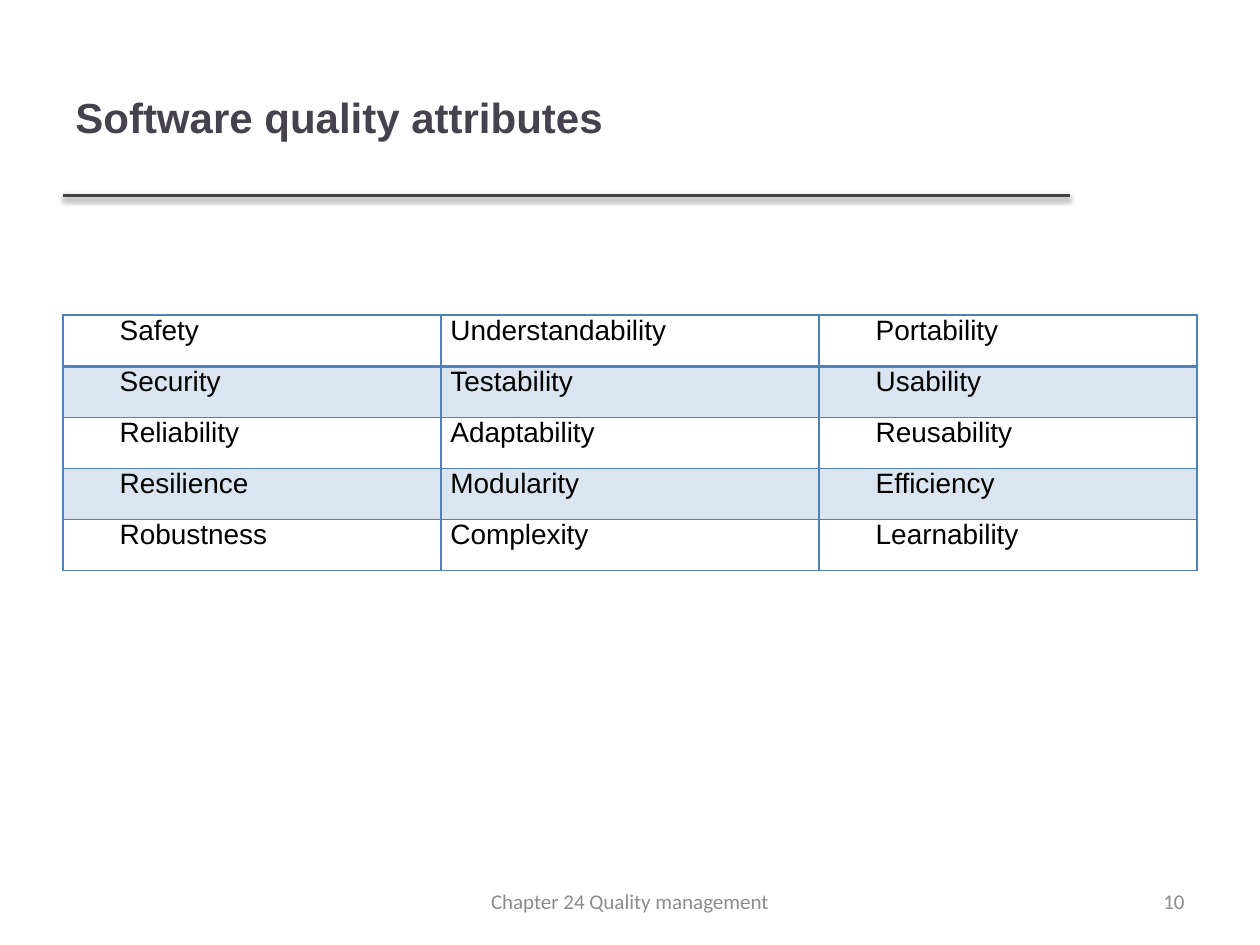
from lxml import etree
from pptx import Presentation
from pptx.dml.color import RGBColor
from pptx.enum.shapes import MSO_CONNECTOR
from pptx.enum.text import MSO_ANCHOR, PP_ALIGN
from pptx.oxml.ns import qn
from pptx.util import Pt

COLORS = {
    "title": "46424D",
    "rule": "404040",
    "shadow": "000000",
    "text": "000000",
    "accent": "4F81BD",
    "footer": "8C8C8C",
}

ATTRIBUTES = [
    ("Safety", "Understandability", "Portability"),
    ("Security", "Testability", "Usability"),
    ("Reliability", "Adaptability", "Reusability"),
    ("Resilience", "Modularity", "Efficiency"),
    ("Robustness", "Complexity", "Learnability"),
]


def add_color(parent, color, alpha=None):
    clr = etree.SubElement(parent, qn("a:srgbClr"), val=COLORS[color])
    if alpha is not None:
        etree.SubElement(clr, qn("a:alpha"), val=str(alpha * 1000))
    return clr


class SlideBuilder:
    """Holds the shared style and the slide being filled."""

    heading_font = "Arial"
    footer_font = "Calibri"

    def __init__(self, slide):
        self.slide = slide

    def style(self, p, font, size, color, bold=False, align=PP_ALIGN.LEFT):
        p.alignment = align
        for r in p.runs:
            r.font.name = font
            r.font.size = Pt(size)
            r.font.bold = bold
            r.font.color.rgb = RGBColor.from_string(COLORS[color])

    def text(self, text, left, top, width, height, **style):
        sp = self.slide.shapes.add_textbox(Pt(left), Pt(top), Pt(width), Pt(height))
        tf = sp.text_frame
        tf.word_wrap = True
        tf.vertical_anchor = MSO_ANCHOR.MIDDLE
        tf.text = text
        self.style(tf.paragraphs[0], **style)

    def rule(self, left, right, y):
        """Draw a horizontal line with a soft shadow below it."""
        line = self.slide.shapes.add_connector(
            MSO_CONNECTOR.STRAIGHT, Pt(left), Pt(y), Pt(right), Pt(y))
        line.line.width = Pt(2)
        line.line.color.rgb = RGBColor.from_string(COLORS["rule"])
        effects = etree.SubElement(line._element.spPr, qn("a:effectLst"))
        shadow = etree.SubElement(
            effects, qn("a:outerShdw"), blurRad=str(Pt(3.1)), dist=str(Pt(1.6)),
            dir="5400000", rotWithShape="0")
        add_color(shadow, "shadow", 38)

    def border(self, cell, side, width):
        ln = etree.SubElement(cell._tc.get_or_add_tcPr(), qn(f"a:ln{side}"), w=str(Pt(width)))
        add_color(etree.SubElement(ln, qn("a:solidFill")), "accent")

    def cell(self, cell, text, row, indent):
        cell.margin_left = cell.margin_right = Pt(5.4)
        cell.margin_top = cell.margin_bottom = 0
        cell.text = text
        p = cell.text_frame.paragraphs[0]
        p._p.get_or_add_pPr().set("indent", str(Pt(indent)))
        self.style(p, self.heading_font, 16, "text", align=PP_ALIGN.JUSTIFY)
        heavy_side = {0: "B", 1: "T"}.get(row)
        for side in "LRTB":
            self.border(cell, side, 2 if side == heavy_side else 1)
        if row % 2:
            fill = etree.SubElement(cell._tc.tcPr, qn("a:solidFill"))
            add_color(fill, "accent", 20)
        else:
            cell.fill.background()

    def table(self, rows, left, top, col_width, row_height):
        n_rows, n_cols = len(rows), len(rows[0])
        table = self.slide.shapes.add_table(
            n_rows, n_cols, Pt(left), Pt(top),
            Pt(col_width * n_cols), Pt(row_height * n_rows)).table
        table.first_row = table.horz_banding = False
        for col in table.columns:
            col.width = Pt(col_width)
        for i, values in enumerate(rows):
            table.rows[i].height = Pt(row_height)
            for j, value in enumerate(values):
                self.cell(table.cell(i, j), value, i, indent=0 if j == 1 else 27)


def main():
    prs = Presentation()
    prs.slide_width, prs.slide_height = Pt(720), Pt(540)
    s = SlideBuilder(prs.slides.add_slide(prs.slide_layouts[6]))

    s.rule(36, 611.25, 111.6)
    s.text("Software quality attributes", 36, 21.6, 574.6, 90,
           font=s.heading_font, size=24, color="title", bold=True)
    s.table(ATTRIBUTES, left=36, top=180, col_width=216, row_height=29.25)

    footer = {"font": s.footer_font, "size": 12, "color": "footer"}
    s.text("10", 516, 500.5, 168, 28.75, align=PP_ALIGN.RIGHT, **footer)
    s.text("Chapter 24 Quality management", 246, 500.5, 228, 28.75,
           align=PP_ALIGN.CENTER, **footer)

    prs.save("out.pptx")


if __name__ == "__main__":
    main()
